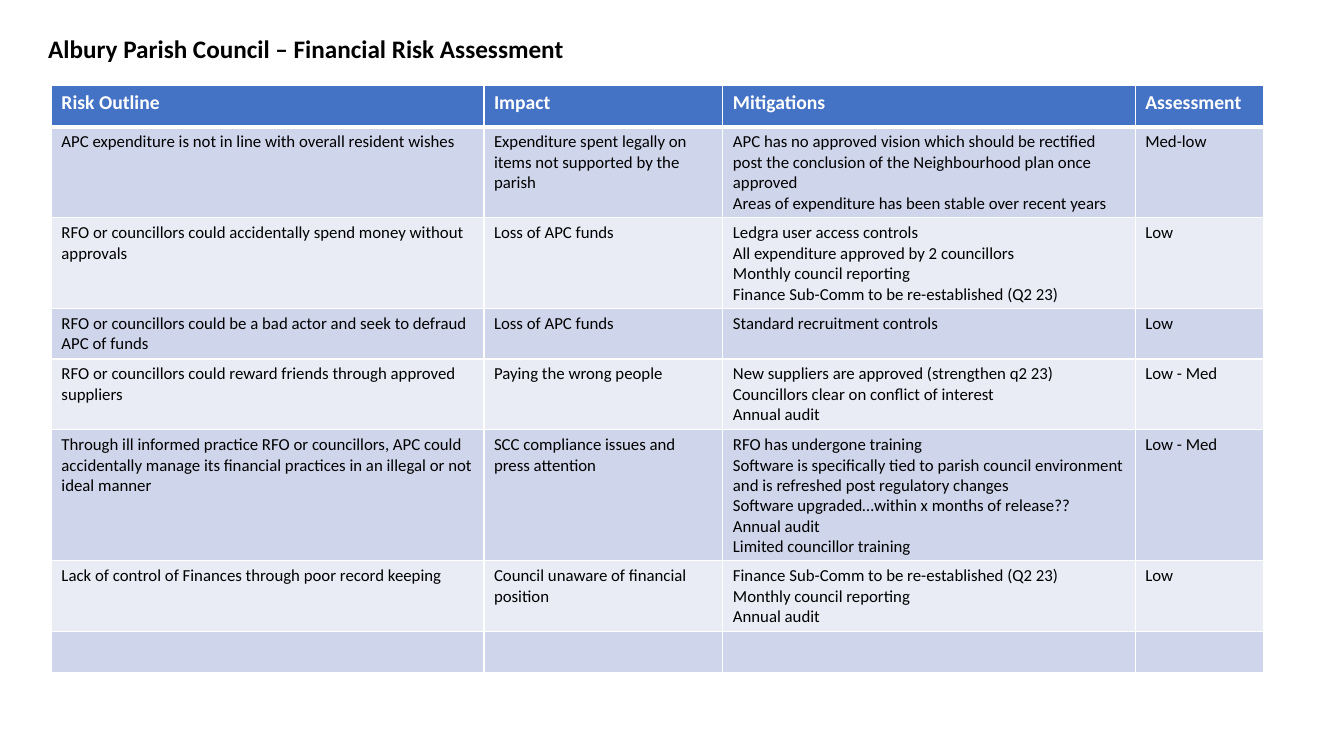
"""Build the financial risk assessment slide."""
from lxml import etree
from pptx import Presentation
from pptx import util as u
from pptx.dml.color import RGBColor
from pptx.enum import text
from pptx.oxml import ns

RISKS = [
    ("Risk Outline", "Impact", "Mitigations", "Assessment"),
    ("APC expenditure is not in line with overall resident wishes",
     "Expenditure spent legally on items not supported by the parish",
     "APC has no approved vision which should be rectified post the conclusion "
     "of the Neighbourhood plan once approved\n"
     "Areas of expenditure has been stable over recent years",
     "Med-low"),
    ("RFO or councillors could accidentally spend money without approvals",
     "Loss of APC funds",
     "Ledgra user access controls\n"
     "All expenditure approved by 2 councillors\n"
     "Monthly council reporting\n"
     "Finance Sub-Comm to be re-established (Q2 23)",
     "Low"),
    ("RFO or councillors could be a bad actor and seek to defraud APC of funds",
     "Loss of APC funds",
     "Standard recruitment controls",
     "Low"),
    ("RFO or councillors could reward friends through approved suppliers",
     "Paying the wrong people",
     "New suppliers are approved (strengthen q2 23)\n"
     "Councillors clear on conflict of interest\n"
     "Annual audit",
     "Low - Med"),
    ("Through ill informed practice RFO or councillors, APC could accidentally "
     "manage its financial practices in an illegal or not ideal manner",
     "SCC compliance issues and press attention",
     "RFO has undergone training\n"
     "Software is specifically tied to parish council environment and is "
     "refreshed post regulatory changes\n"
     "Software upgraded…within x months of release??\n"
     "Annual audit\n"
     "Limited councillor training",
     "Low - Med"),
    ("Lack of control of Finances through poor record keeping",
     "Council unaware of financial position",
     "Finance Sub-Comm to be re-established (Q2 23)\n"
     "Monthly council reporting\n"
     "Annual audit",
     "Low"),
    ("", "", "", ""),
]


def color(value):
    return RGBColor.from_string(value)


class RiskSlide:
    font_name = "Calibri"
    ink, paper, header = "000000", "FFFFFF", "4472C4"
    bands = ("E9EBF5", "CFD5EA")

    def __init__(self, slide):
        self.slide = slide

    def set_text(self, frame, content, size, ink, bold=False):
        frame.text = content
        for paragraph in frame.paragraphs:
            font = paragraph.font
            font.name, font.size, font.bold = self.font_name, u.Pt(size), bold
            font.color.rgb = color(ink)

    def title(self, content, left, top, width, height):
        shape = self.slide.shapes.add_textbox(
            u.Inches(left), u.Inches(top), u.Inches(width), u.Inches(height))
        frame = shape.text_frame
        frame.word_wrap = False
        frame.auto_size = text.MSO_AUTO_SIZE.SHAPE_TO_FIT_TEXT
        self.set_text(frame, content, 18, self.ink, bold=True)

    def borders(self, cell, widths):
        properties = cell._tc.get_or_add_tcPr()
        for side, width in widths.items():
            line = etree.SubElement(properties, ns.qn(f"a:ln{side}"), w=str(u.Pt(width)))
            fill = etree.SubElement(line, ns.qn("a:solidFill"))
            etree.SubElement(fill, ns.qn("a:srgbClr"), val=self.paper)

    def table(self, rows, left, top, widths, row_height):
        table = self.slide.shapes.add_table(
            len(rows), len(widths), u.Inches(left), u.Inches(top),
            u.Inches(sum(widths)), u.Inches(row_height * len(rows))).table
        for column, width in zip(table.columns, widths):
            column.width = u.Inches(width)
        for row_index, row in enumerate(rows):
            is_header = row_index == 0
            for column_index, content in enumerate(row):
                cell = table.cell(row_index, column_index)
                self.borders(cell, {"L": 1, "R": 1, "T": 3 if row_index == 1 else 1,
                                    "B": 3 if is_header else 1})
                cell.fill.solid()
                cell.fill.fore_color.rgb = color(
                    self.header if is_header else self.bands[row_index % 2])
                if content:
                    self.set_text(cell.text_frame, content, 14 if is_header else 12,
                                  self.paper if is_header else self.ink, is_header)


def main():
    presentation = Presentation()
    presentation.slide_width = u.Inches(13.33)
    presentation.slide_height = u.Inches(7.5)
    page = RiskSlide(presentation.slides.add_slide(presentation.slide_layouts[6]))
    page.title("Albury Parish Council – Financial Risk Assessment", 0.38, 0.28, 5.35, 0.4)
    page.table(RISKS, 0.51, 0.85, (4.29, 2.37, 4.09, 1.27), 0.41)
    presentation.save("out.pptx")


if __name__ == "__main__":
    main()
